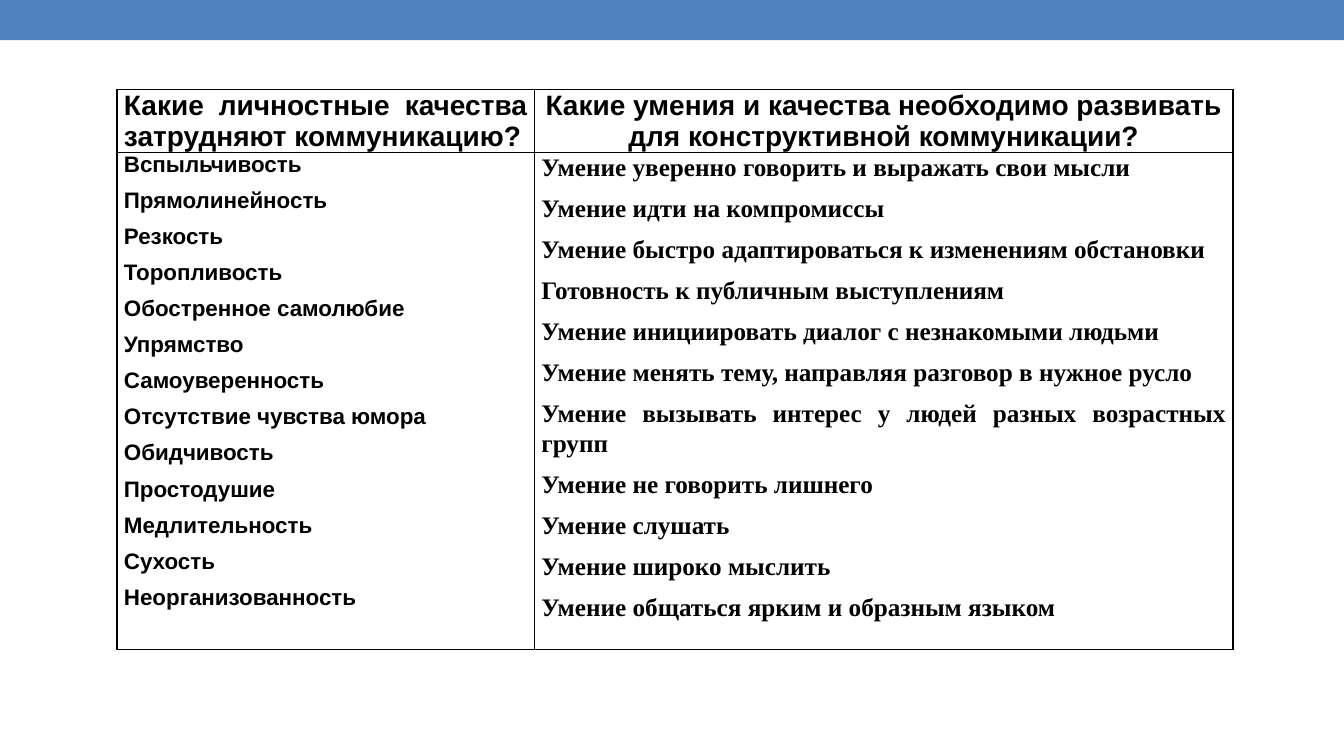
from lxml import etree
from pptx import Presentation
from pptx.dml.color import RGBColor
from pptx.enum.shapes import MSO_SHAPE
from pptx.enum.text import PP_ALIGN
from pptx.oxml.ns import qn
from pptx.util import Inches, Pt

RECTANGLE = MSO_SHAPE.RECTANGLE
CENTER, JUSTIFY = PP_ALIGN.CENTER, PP_ALIGN.JUSTIFY

COLORS = {"band": "4F81BD", "text": "000000", "border": "000000"}

HEADERS = [
    "Какие личностные качества затрудняют коммуникацию?",
    "Какие умения и качества необходимо развивать для конструктивной коммуникации?",
]
BARRIERS = [
    "Вспыльчивость",
    "Прямолинейность",
    "Резкость",
    "Торопливость",
    "Обостренное самолюбие",
    "Упрямство",
    "Самоуверенность",
    "Отсутствие чувства юмора",
    "Обидчивость",
    "Простодушие",
    "Медлительность",
    "Сухость",
    "Неорганизованность",
]
SKILLS = [
    "Умение уверенно говорить и выражать свои мысли",
    "Умение идти на компромиссы",
    "Умение быстро адаптироваться к изменениям обстановки",
    "Готовность к публичным выступлениям",
    "Умение инициировать диалог с незнакомыми людьми",
    "Умение менять тему, направляя разговор в нужное русло",
    "Умение вызывать интерес у людей разных возрастных групп",
    "Умение не говорить лишнего",
    "Умение слушать",
    "Умение широко мыслить",
    "Умение общаться ярким и образным языком",
]
CELLS = [
    (0, 0, [HEADERS[0]], "Arial", 20, JUSTIFY, None),
    (0, 1, [HEADERS[1]], "Arial", 20, CENTER, None),
    (1, 0, BARRIERS, "Arial", 16, JUSTIFY, None),
    (1, 1, SKILLS, "Times New Roman", 18, JUSTIFY, 1.07),
]
COL_WIDTHS = [4.14, 6.93]
ROW_HEIGHTS = [0.51, 4.93]
MARGINS = {
    "margin_left": Inches(0.07),
    "margin_right": Inches(0.07),
    "margin_top": 0,
    "margin_bottom": 0,
}


def set_all(obj, values):
    for name, value in values.items():
        setattr(obj, name, value)


def add_borders(cell):
    tc_pr = cell._tc.get_or_add_tcPr()
    for side in ("a:lnL", "a:lnR", "a:lnT", "a:lnB"):
        ln = etree.SubElement(tc_pr, qn(side), w=str(Pt(1)))
        fill = etree.SubElement(ln, qn("a:solidFill"))
        etree.SubElement(fill, qn("a:srgbClr"), val=COLORS["border"])


def fill_cell(cell, lines, font, size, align, spacing):
    set_all(cell, MARGINS)
    add_borders(cell)
    cell.fill.background()
    tf = cell.text_frame
    for i, line in enumerate(lines):
        p = tf.paragraphs[0] if i == 0 else tf.add_paragraph()
        set_all(p, {"alignment": align, "space_after": Pt(8), "line_spacing": spacing})
        r = p.add_run()
        r.text = line
        set_all(r.font, {"name": font, "size": Pt(size), "bold": True})
        r.font.color.rgb = RGBColor.from_string(COLORS["text"])


def main():
    prs = Presentation()
    prs.slide_width, prs.slide_height = Inches(13.33), Inches(7.5)
    s = prs.slides.add_slide(prs.slide_layouts[6])

    band = s.shapes.add_shape(RECTANGLE, 0, 0, prs.slide_width, Inches(0.4))
    band.shadow.inherit = False
    band.fill.solid()
    band.fill.fore_color.rgb = RGBColor.from_string(COLORS["band"])
    band.line.fill.background()

    table = s.shapes.add_table(
        len(ROW_HEIGHTS), len(COL_WIDTHS), Inches(1.16), Inches(0.89),
        Inches(sum(COL_WIDTHS)), Inches(sum(ROW_HEIGHTS)),
    ).table
    set_all(table, {"first_row": False, "horz_banding": False})
    for col, width in zip(table.columns, COL_WIDTHS):
        col.width = Inches(width)
    for row, height in zip(table.rows, ROW_HEIGHTS):
        row.height = Inches(height)
    for row, col, *content in CELLS:
        fill_cell(table.cell(row, col), *content)

    prs.save("out.pptx")


if __name__ == "__main__":
    main()
